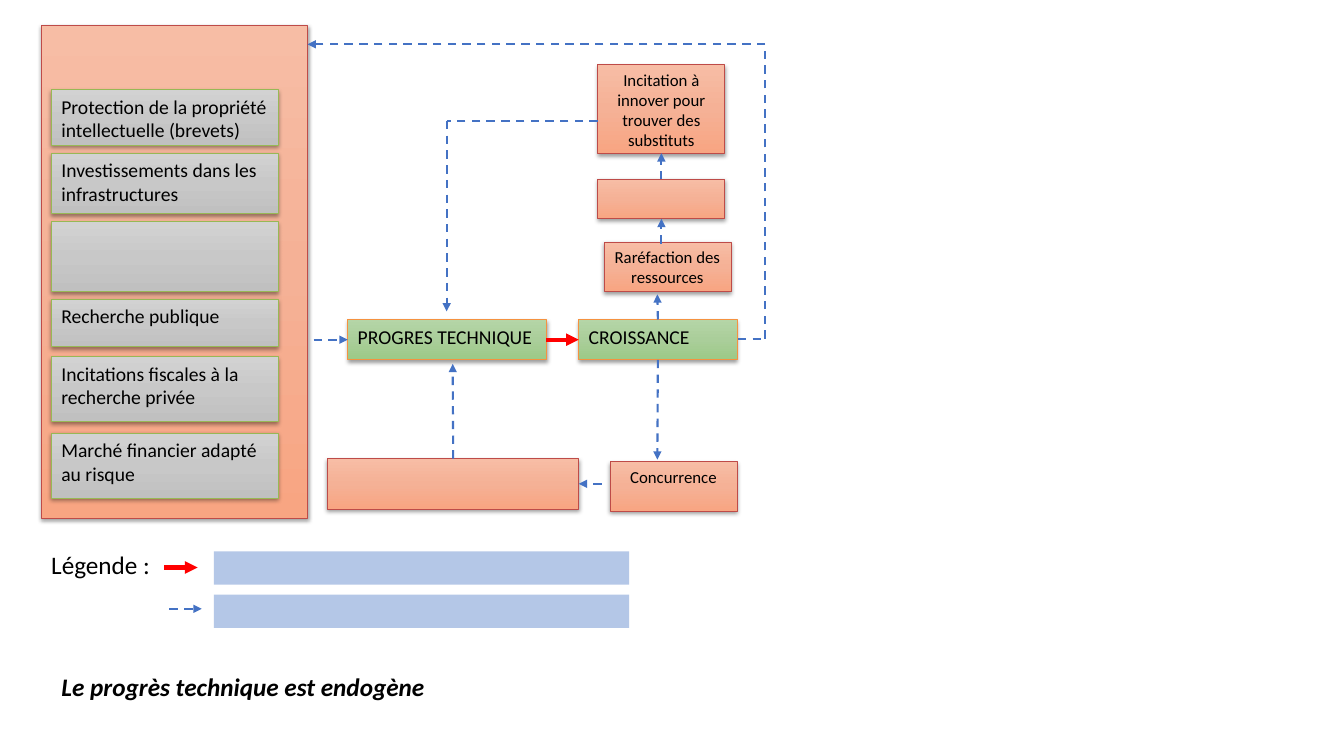
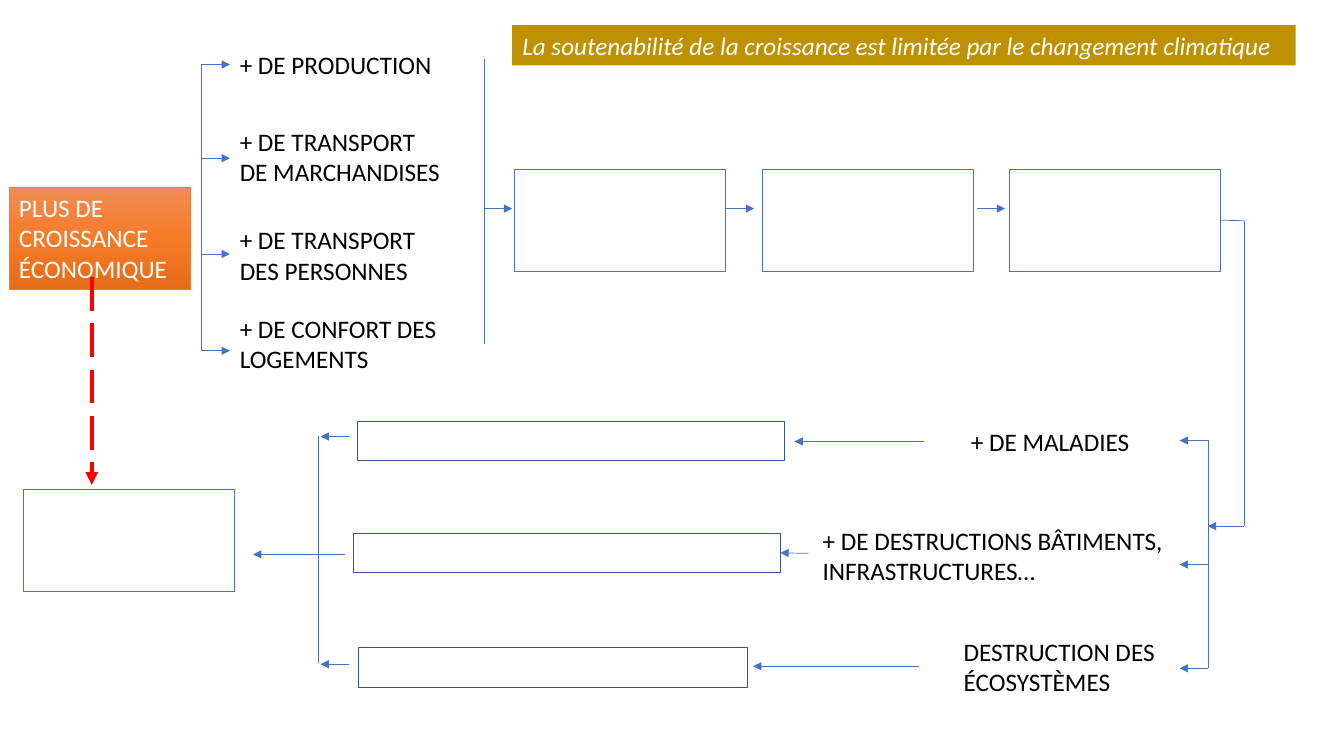
from copy import deepcopy
from dataclasses import dataclass
from typing import Any

from pptx import Presentation
from pptx.dml.color import RGBColor
from pptx.enum.dml import MSO_LINE
from pptx.enum.shapes import MSO_CONNECTOR, MSO_SHAPE
from pptx.enum.text import MSO_ANCHOR, MSO_AUTO_SIZE, PP_ALIGN
from pptx.oxml import parse_xml
from pptx.oxml.ns import nsdecls, qn
from pptx.util import Inches, Pt

RECT = MSO_SHAPE.RECTANGLE
STRAIGHT = MSO_CONNECTOR.STRAIGHT
DASH, LONG_DASH = MSO_LINE.DASH, MSO_LINE.LONG_DASH
LEFT, CENTER = PP_ALIGN.LEFT, PP_ALIGN.CENTER
ANCHOR_TOP = MSO_ANCHOR.TOP
NO_FIT = MSO_AUTO_SIZE.NONE
TOP, LEFT_SIDE, BOTTOM, RIGHT_SIDE = range(4)

FONT = "Calibri"
BLACK, WHITE, RED, BLUE, NAVY = "000000", "FFFFFF", "FF0000", "4472C4", "325491"
PALE_BLUE, GOLD = "B4C7E7", "BF9000"
SALMON = (("F7BDA5", "F5B196", "F8A582"), "BE4B48")
GREY = (("D2D2D2", "C8C8C8", "C0C0C0"), "98B855")
GREEN = (("B5D5A7", "AACE9A", "9CC987"), "F59240")
ORANGE = (("F18C57", "F67B28", "E56C19"), "ED7D31")


def rgb(value):
    return RGBColor.from_string(value)


def write(shape, text, size, color=BLACK, align=LEFT, bold=False, italic=False):
    frame = shape.text_frame
    frame.word_wrap = True
    frame.auto_size = NO_FIT
    frame.vertical_anchor = ANCHOR_TOP
    frame.margin_left = frame.margin_right = Inches(0.1)
    frame.margin_top = frame.margin_bottom = Inches(0.05)
    paragraph = frame.paragraphs[0]
    paragraph.alignment = align
    run = paragraph.add_run()
    run.text = text
    font = run.font
    font.name, font.size, font.bold, font.italic = FONT, Pt(size), bold, italic
    font.color.rgb = rgb(color)


def shade(shape, colors):
    shape.fill.gradient()
    shape.fill.gradient_angle = 270
    stop_list = next(shape._element.spPr.iter(qn("a:gsLst")))
    stop_list.insert(1, deepcopy(stop_list[0]))
    for stop, color, position in zip(shape.fill.gradient_stops, colors, (0, 0.5, 1)):
        stop.color.rgb = rgb(color)
        stop.position = position


def cast_shadow(shape):
    effects = shape._element.spPr.find(qn("a:effectLst"))
    effects.append(parse_xml(
        f'<a:outerShdw {nsdecls("a")} blurRad="{Pt(3.1)}" dist="{Pt(1.6)}" '
        'dir="5400000" rotWithShape="0"><a:srgbClr val="000000">'
        '<a:alpha val="38000"/></a:srgbClr></a:outerShdw>'))


@dataclass
class Region:
    slide: Any
    left: float
    top: float

    def place(self, x, y):
        return Inches(self.left + x), Inches(self.top + y)

    def rect(self, x, y, width, height, fill=None, line=None, weight=0.75):
        shape = self.slide.shapes.add_shape(
            RECT, *self.place(x, y), Inches(width), Inches(height))
        shape.shadow.inherit = False
        if fill:
            shape.fill.solid()
            shape.fill.fore_color.rgb = rgb(fill)
        else:
            shape.fill.background()
        if line:
            shape.line.color.rgb = rgb(line)
            shape.line.width = Pt(weight)
        else:
            shape.line.fill.background()
        return shape

    def card(self, box, style, text="", size=14, align=LEFT, color=BLACK, shadow=True):
        colors, outline = style
        shape = self.rect(*box, line=outline, weight=0.5)
        shade(shape, colors)
        if shadow:
            cast_shadow(shape)
        if text:
            write(shape, text, size, color, align)
        return shape

    def label(self, x, y, width, height, text):
        box = self.slide.shapes.add_textbox(
            *self.place(x, y), Inches(width), Inches(height))
        write(box, text, 18)

    def link(self, start, end, color=BLUE, weight=0.5, dash=None, arrow=True):
        joined_start, joined_end = (hasattr(end_point[0], "shape_id")
                                    for end_point in (start, end))
        begin = (0, 0) if joined_start else start
        finish = (0, 0) if joined_end else end
        connector = self.slide.shapes.add_connector(
            STRAIGHT, *self.place(*begin), *self.place(*finish))
        if joined_start:
            connector.begin_connect(*start)
        if joined_end:
            connector.end_connect(*end)
        line = connector.line
        line.color.rgb = rgb(color)
        line.width = Pt(weight)
        if dash:
            line.dash_style = dash
        if arrow:
            line._get_or_add_ln().append(
                parse_xml(f'<a:tailEnd {nsdecls("a")} type="triangle"/>'))
        connector._element.spPr.append(parse_xml(f'<a:effectLst {nsdecls("a")}/>'))

    def dashed(self, start, end, arrow=True):
        self.link(start, end, weight=1.5, dash=DASH, arrow=arrow)


def new_slide(deck, title, box, color=BLACK, bold=False, fill=None):
    slide = deck.slides.add_slide(deck.slide_layouts[5])
    heading = slide.shapes.title
    heading.left, heading.top, heading.width, heading.height = map(Inches, box)
    if fill:
        heading.fill.solid()
        heading.fill.fore_color.rgb = rgb(fill)
    write(heading, title, 18, color, bold=bold, italic=True)
    return slide


def institutions(region):
    region.card((0, 0, 2.64, 4.89), SALMON)
    for top, height, text in (
        (0.64, 0.55, "Protection de la propriété intellectuelle (brevets)"),
        (1.27, 0.6, "Investissements dans les infrastructures"),
        (1.95, 0.69, ""),
        (2.72, 0.47, "Recherche publique"),
        (3.29, 0.64, "Incitations fiscales à la recherche privée"),
        (4.05, 0.64, "Marché financier adapté au risque"),
    ):
        region.card((0.1, top, 2.25, height), GREY, text)


def growth_loop(region):
    def step(x, y, height, text=""):
        return region.card((x, y, 1.26, height), SALMON, text, 12, CENTER)

    growth = region.card((2.69, 2.73, 1.57, 0.4), GREEN, "CROISSANCE")
    progress = region.card((0.4, 2.73, 1.97, 0.4), GREEN, "PROGRES TECHNIQUE")
    step(2.94, 1.96, 0.49, "Raréfaction des ressources")
    scarcity_effect = step(2.88, 1.34, 0.39)
    incentive = step(2.88, 0.2, 0.88, "Incitation à innover pour trouver des substituts")
    step(3, 4.14, 0.49, "Concurrence")
    competition_effect = region.card((0.2, 4.11, 2.49, 0.5), SALMON)

    region.link((progress, RIGHT_SIDE), (growth, LEFT_SIDE), RED, 3)
    for start, end in (
        ((0.06, 2.93), (progress, LEFT_SIDE)),
        ((growth, TOP), (3.47, 2.48)),
        ((3.51, 1.98), (scarcity_effect, BOTTOM)),
        ((scarcity_effect, TOP), (incentive, BOTTOM)),
        ((1.38, 0.76), (1.38, 2.65)),
        ((growth, BOTTOM), (3.47, 4.12)),
        ((2.92, 4.36), (competition_effect, RIGHT_SIDE)),
        ((competition_effect, TOP), (1.44, 3.17)),
        ((4.54, 0), (0, 0)),
    ):
        region.dashed(start, end)
    for start, end in (
        ((2.88, 0.76), (1.38, 0.76)),
        ((4.27, 2.92), (4.54, 2.92)),
        ((4.54, 2.92), (4.54, 0)),
    ):
        region.dashed(start, end, arrow=False)


def legend(region):
    region.label(0, 0, 1.3, 0.4, "Légende :")
    region.link((1.22, 0.23), (1.55, 0.23), RED, 3)
    region.dashed((1.27, 0.64), (1.59, 0.64))
    for top in (0.07, 0.5):
        region.rect(1.71, top, 4.12, 0.33, PALE_BLUE)


def growth_sources(region):
    region.card((0, 1.42, 1.8, 1.01), ORANGE, "PLUS DE CROISSANCE ÉCONOMIQUE",
                18, color=WHITE, shadow=False)
    region.link((1.91, 0.2), (1.91, 3.04), arrow=False)
    for top, height, arrow_y, text in (
        (0, 0.4, 0.2, "+ DE PRODUCTION"),
        (0.76, 0.71, 1.13, "+ DE TRANSPORT DE MARCHANDISES"),
        (1.74, 0.71, 2.08, "+ DE TRANSPORT DES PERSONNES"),
        (2.62, 0.71, 3.04, "+ DE CONFORT DES LOGEMENTS"),
    ):
        region.label(2.19, top, 2.23, height, text)
        region.link((1.91, arrow_y), (2.19, arrow_y))
    region.link((0.82, 2.31), (0.82, 4.37), RED, 3, LONG_DASH)


def climate_chain(region):
    region.link((0, 0), (0, 2.82), arrow=False)
    for box_x, arrow_x in ((0.3, 0), (2.76, 2.4), (5.21, 4.89)):
        stage = region.rect(box_x, 1.09, 2.1, 1.01, line=BLUE)
        region.link((arrow_x, 1.48), (arrow_x + 0.28, 1.48))
    region.link((stage, RIGHT_SIDE), (7.54, 1.6), arrow=False)
    region.link((7.54, 1.6), (7.54, 4.63), arrow=False)
    region.link((7.54, 4.63), (7.18, 4.63))


def damages(region):
    region.link((3.92, 2.45), (3.92, 0.19), arrow=False)
    for box, arrow_y, text in (
        ((1.47, 0, 1.81, 0.4), 0.19, "+ DE MALADIES"),
        ((0, 0.98, 3.65, 0.71), 1.42, "+ DE DESTRUCTIONS BÂTIMENTS, INFRASTRUCTURES…"),
        ((1.4, 2.08, 2.24, 0.71), 2.45, "DESTRUCTION DES ÉCOSYSTÈMES"),
    ):
        region.label(*box, text)
        region.link((3.92, arrow_y), (3.64, arrow_y))


def costs(region):
    region.rect(0, 0.68, 2.1, 1.01, line=BLUE)
    region.rect(3.32, 0, 4.23, 0.39, line=NAVY)
    rebuilding = region.rect(3.28, 1.11, 4.23, 0.39, line=NAVY)
    region.rect(3.33, 2.24, 3.85, 0.4, line=NAVY)
    region.link((2.93, 2.4), (2.93, 0.15), arrow=False)
    for start, end in (
        ((3.23, 0.15), (2.95, 0.15)),
        ((3.19, 1.32), (2.28, 1.32)),
        ((3.23, 2.41), (2.95, 2.41)),
        ((8.93, 0.2), (7.65, 0.2)),
        ((7.79, 1.31), (rebuilding, RIGHT_SIDE)),
        ((8.88, 2.43), (7.24, 2.43)),
    ):
        region.link(start, end)


def main():
    deck = Presentation()
    deck.slide_width, deck.slide_height = Inches(13.33), Inches(7.5)

    progress = new_slide(deck, "Le progrès technique est endogène",
                         (0.51, 6.61, 3.94, 0.53), bold=True)
    institutions(Region(progress, 0.41, 0.25))
    growth_loop(Region(progress, 3.05, 0.44))
    legend(Region(progress, 0.41, 5.4))

    climate = new_slide(
        deck, "La soutenabilité de la croissance est limitée par le changement climatique",
        (5.08, 0.25, 7.77, 0.4), WHITE, fill=GOLD)
    growth_sources(Region(climate, 0.09, 0.44))
    climate_chain(Region(climate, 4.8, 0.59))
    damages(Region(climate, 8.06, 4.18))
    costs(Region(climate, 0.23, 4.18))

    deck.save("out.pptx")


if __name__ == "__main__":
    main()
